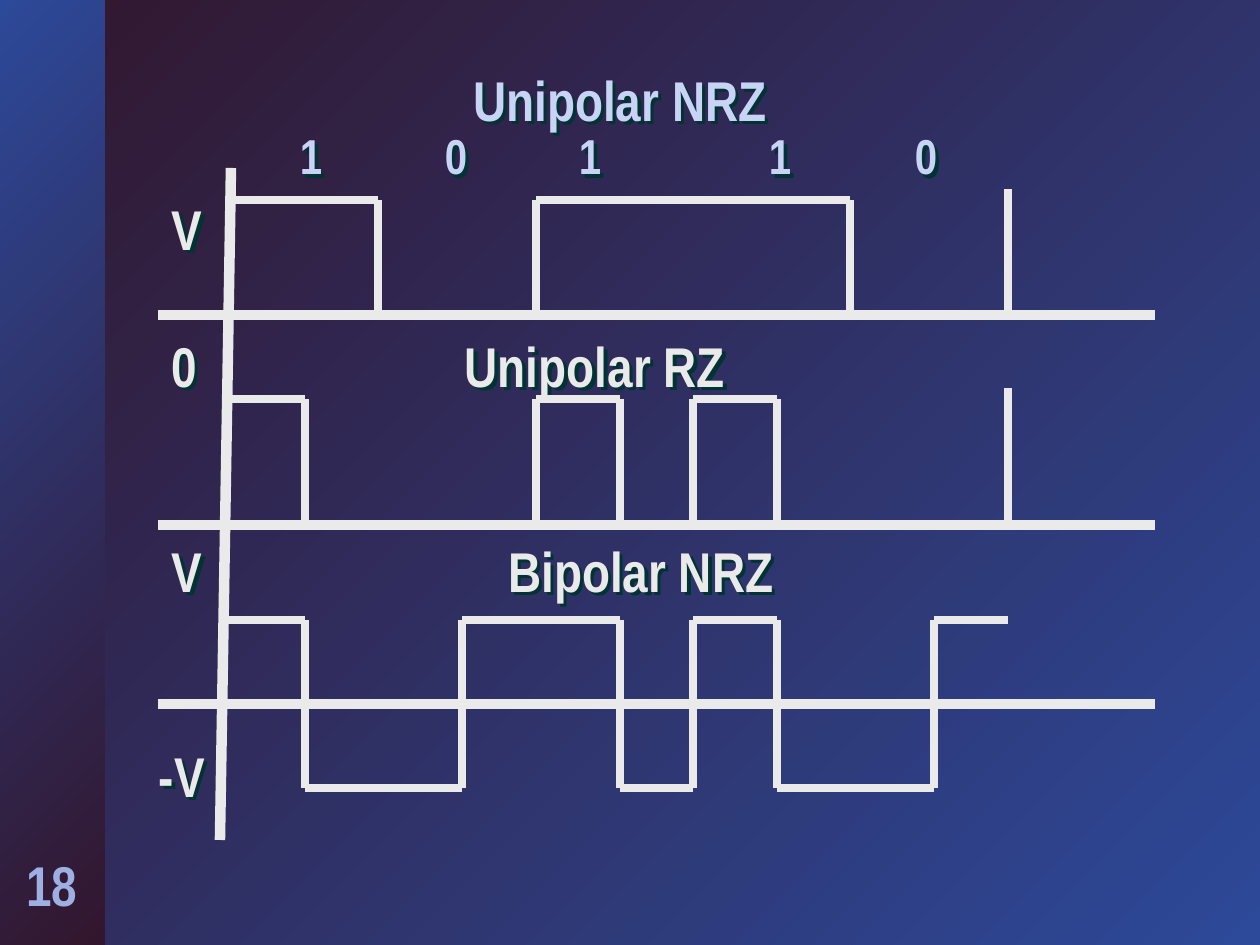
"""Draw line-coding waveforms for the bits 1 0 1 1 0."""
from itertools import pairwise

from lxml import etree
from pptx import Presentation
from pptx.dml.color import RGBColor
from pptx.enum.shapes import MSO_CONNECTOR, MSO_SHAPE
from pptx.enum.text import MSO_ANCHOR, PP_ALIGN
from pptx.oxml.ns import qn
from pptx.util import Pt

STRAIGHT = MSO_CONNECTOR.STRAIGHT
RECTANGLE = MSO_SHAPE.RECTANGLE
MIDDLE = MSO_ANCHOR.MIDDLE
CENTER = PP_ALIGN.CENTER
PX = 914400 / 126
THEME = {
    "font": "Arial Narrow", "large": 32, "small": 28,
    "dark": "32162D", "blue": "2D4999", "ink": "EAEAEA",
    "title": "C8D3F6", "number": "9EB0E2", "shadow": "003333",
    "axis": 6, "signal": 4.5,
}


def emu(*lengths):
    return [round(length * PX) for length in lengths]


def label(text, x, y, color="ink", size="large", shadow=True):
    width, height = 8 + 30 * len(text), 60
    box = slide.shapes.add_textbox(*emu(x - width / 2, y - height / 2, width, height))
    frame = box.text_frame
    frame_format = {"margin_left": 0, "margin_right": 0, "margin_top": 0,
                    "margin_bottom": 0, "word_wrap": True, "vertical_anchor": MIDDLE}
    for name, value in frame_format.items():
        setattr(frame, name, value)
    paragraph = frame.paragraphs[0]
    paragraph.alignment = CENTER
    run = paragraph.add_run()
    run.text = text
    font_format = {"name": THEME["font"], "size": Pt(THEME[size]), "bold": True}
    for name, value in font_format.items():
        setattr(run.font, name, value)
    run.font.color.rgb = RGBColor.from_string(THEME[color])
    if shadow:
        effects = etree.SubElement(box._element.spPr, qn("a:effectLst"))
        outer = etree.SubElement(effects, qn("a:outerShdw"), dist="35921", dir="2700000")
        etree.SubElement(outer, qn("a:srgbClr"), val=THEME["shadow"])


prs = Presentation()
prs.slide_width, prs.slide_height = emu(1260, 945)
slide = prs.slides.add_slide(prs.slide_layouts[6])

sidebar = slide.shapes.add_shape(RECTANGLE, *emu(0, 0, 105, 945))
sidebar.shadow.inherit = False
sidebar.line.fill.background()
gradients = [(slide.background.fill, ("dark", "blue")), (sidebar.fill, ("blue", "dark"))]
for fill, colors in gradients:
    fill.gradient()
    fill.gradient_angle = 315
    for stop, color in zip(fill.gradient_stops, colors):
        stop.color.rgb = RGBColor.from_string(THEME[color])

label("18", 52, 884, "number", shadow=False)
label("Unipolar NRZ", 620, 99, "title")
for bit, x in zip("10110", (311, 456, 590, 780, 926)):
    label(bit, x, 155, "title", "small")
for text, x, y in [("V", 187, 228), ("0", 184, 365), ("Unipolar RZ", 595, 365),
                   ("V", 187, 570), ("Bipolar NRZ", 641, 570), ("-V", 182, 775)]:
    label(text, x, y)

axes = [[(231, 168), (220, 840)]]
axes += [[(158, y), (1155, y)] for y in (704, 315, 525)]
unipolar_nrz = [
    [(231, 200), (378, 200), (378, 315)],
    [(536, 315), (536, 200), (850, 200), (850, 315)],
    [(1008, 315), (1008, 189)],
]
unipolar_rz = [
    [(231, 399), (305, 399), (305, 525)],
    [(536, 525), (536, 399), (620, 399), (620, 525)],
    [(693, 525), (693, 399), (777, 399), (777, 525)],
    [(1008, 525), (1008, 388)],
]
bipolar_nrz = [(220, 620)]
level, other = 620, 788
for x in (305, 462, 620, 693, 777, 934):
    bipolar_nrz += [(x, level), (x, other)]
    level, other = other, level
bipolar_nrz.append((1008, level))

signals = unipolar_nrz + unipolar_rz + [bipolar_nrz]
for weight, traces in (("axis", axes), ("signal", signals)):
    for trace in traces:
        for start, end in pairwise(trace):
            stroke = slide.shapes.add_connector(STRAIGHT, *emu(*start, *end))
            stroke.line.width = Pt(THEME[weight])
            stroke.line.color.rgb = RGBColor.from_string(THEME["ink"])
            etree.SubElement(stroke._element.spPr, qn("a:effectLst"))

prs.save("out.pptx")
